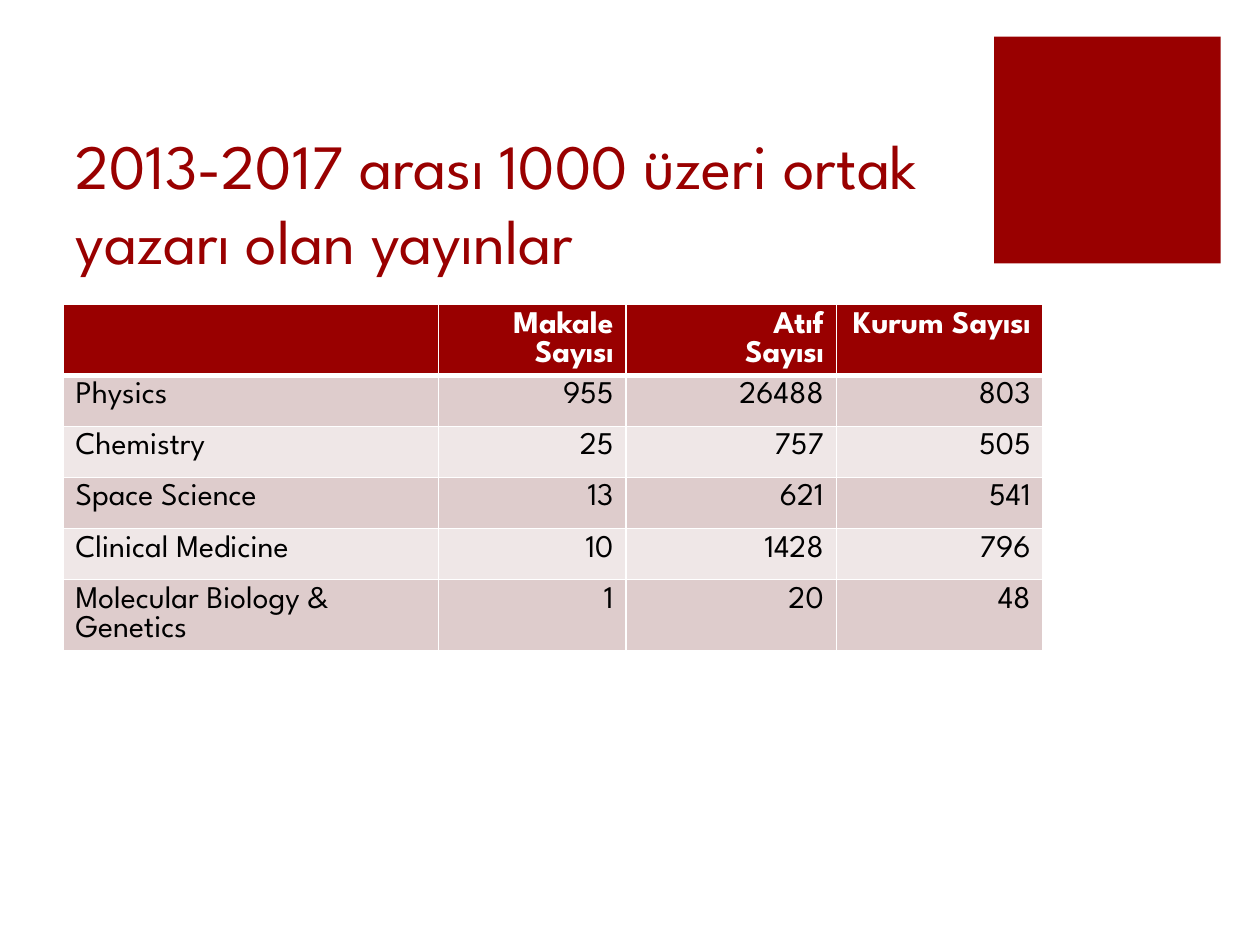
"""Build a slide with a table of publications that have over 1000 co-authors."""
from typing import NamedTuple

from lxml.etree import SubElement
from pptx import Presentation
from pptx.dml.color import RGBColor
from pptx.enum.shapes import MSO_SHAPE as Shape
from pptx.enum.text import MSO_ANCHOR as Anchor, PP_ALIGN as Align
from pptx.oxml.ns import qn
from pptx.util import Cm, Pt

FONT = "League Spartan"
RED, WHITE, BLACK = "990000", "FFFFFF", "000000"
BANDS = ("DECCCC", "EFE7E7")
COL_WIDTHS = (7.57, 3.78, 4.24, 4.17)
ROW_HEIGHT = 1.03
CELL_LINE = 16.6
WRAP_MARGIN = 2


class Row(NamedTuple):
    field: str
    articles: str
    citations: str
    institutions: str


ROWS = (
    Row("", "Makale Sayısı", "Atıf Sayısı", "Kurum Sayısı"),
    Row("Physics", "955", "26488", "803"),
    Row("Chemistry", "25", "757", "505"),
    Row("Space Science", "13", "621", "541"),
    Row("Clinical Medicine", "10", "1428", "796"),
    Row("Molecular Biology & Genetics", "1", "20", "48"),
)


def rgb(color: str) -> RGBColor:
    return RGBColor.from_string(color)


def style_text(tf, size: float, color: str, bold: bool = False) -> None:
    for p in tf.paragraphs:
        for r in p.runs:
            r.font.name, r.font.size, r.font.bold = FONT, Pt(size), bold
            r.font.color.rgb = rgb(color)


def set_border(cell, side: str, width: float) -> None:
    ln = SubElement(cell._tc.get_or_add_tcPr(), qn(f"a:{side}"), w=str(Pt(width)))
    SubElement(SubElement(ln, qn("a:solidFill")), qn("a:srgbClr"), val=WHITE)


def add_accent(s) -> None:
    sp = s.shapes.add_shape(Shape.RECTANGLE, Cm(20.04), Cm(0.74), Cm(4.57), Cm(4.57))
    sp.shadow.inherit = False
    sp.fill.solid()
    sp.fill.fore_color.rgb = rgb(RED)
    sp.line.fill.background()


def add_title(s, text: str) -> None:
    sp = s.shapes.add_textbox(Cm(1.27), Cm(2.54), Cm(18.08), Cm(3.18))
    tf = sp.text_frame
    tf.word_wrap = True
    tf.vertical_anchor = Anchor.BOTTOM
    tf.text = text
    style_text(tf, 36, RED)


def fill_cell(cell, text: str, row: int, col: int) -> None:
    header = row == 0
    for side in ("lnL", "lnR", "lnT", "lnB"):
        thick = (row, side) in ((0, "lnB"), (1, "lnT"))
        set_border(cell, side, 3 if thick else 1)
    cell.fill.solid()
    cell.fill.fore_color.rgb = rgb(RED if header else BANDS[(row - 1) % 2])
    cell.text_frame.text = text
    p = cell.text_frame.paragraphs[0]
    p.alignment = Align.RIGHT if col else Align.LEFT
    p.line_spacing = Pt(CELL_LINE)
    style_text(cell.text_frame, 18, WHITE if header else BLACK, header)


def add_publications(s) -> None:
    table = s.shapes.add_table(
        len(ROWS), len(COL_WIDTHS), Cm(1.27), Cm(6.14),
        Cm(sum(COL_WIDTHS)), Cm(ROW_HEIGHT * len(ROWS))).table
    for column, width in zip(table.columns, COL_WIDTHS):
        column.width = Cm(width)
    for i, row in enumerate(ROWS):
        for j, text in enumerate(row):
            fill_cell(table.cell(i, j), text, i, j)
    table.cell(0, 2).margin_left = Cm(WRAP_MARGIN)


def main() -> None:
    prs = Presentation()
    prs.slide_width, prs.slide_height = Cm(25.4), Cm(19.05)
    s = prs.slides.add_slide(prs.slide_layouts[6])
    add_accent(s)
    add_title(s, "2013-2017 arası 1000 üzeri ortak yazarı olan yayınlar")
    add_publications(s)
    prs.save("out.pptx")


if __name__ == "__main__":
    main()
